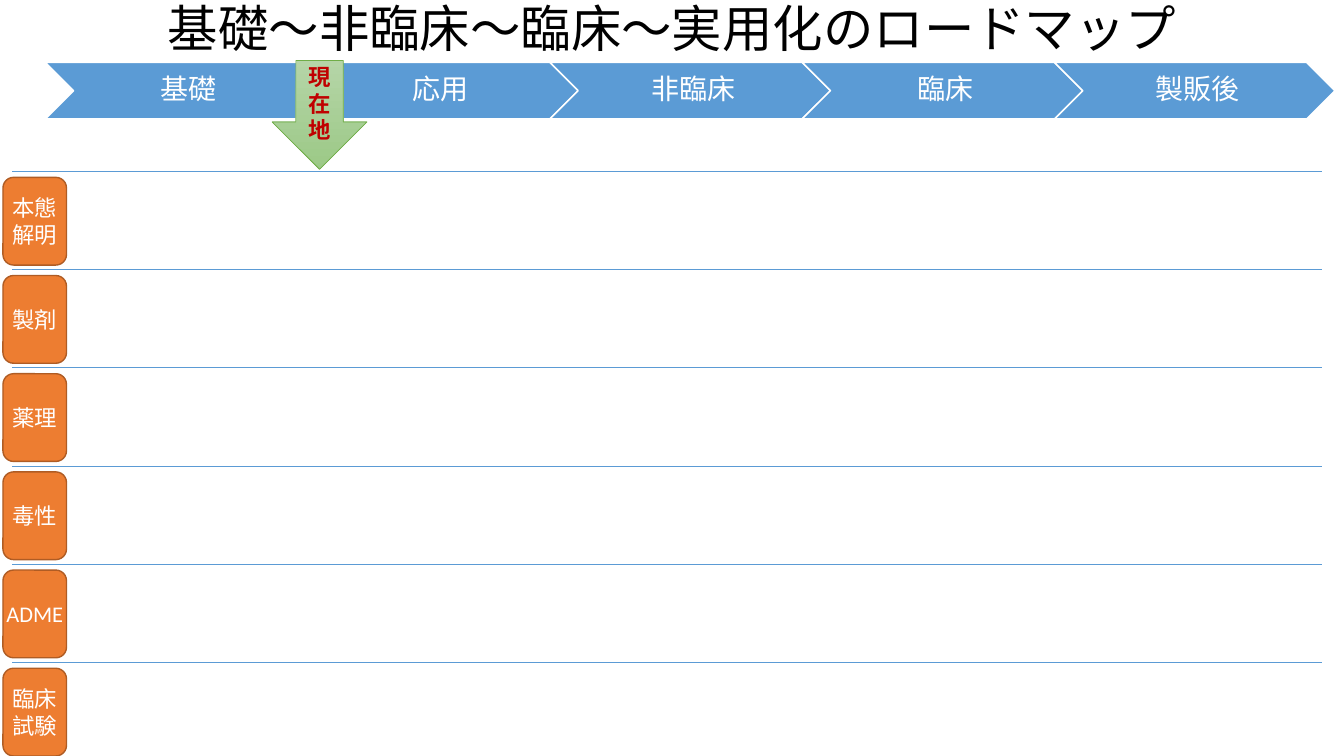
from lxml.etree import SubElement
from pptx import Presentation
from pptx.dml.color import RGBColor
from pptx.enum.shapes import MSO_CONNECTOR as Connector, MSO_SHAPE as Preset
from pptx.enum.text import MSO_ANCHOR as Anchor, MSO_AUTO_SIZE as AutoSize, PP_ALIGN as Align
from pptx.oxml.ns import qn
from pptx.util import Inches, Pt

WIDTH, HEIGHT = 13.33, 7.5
COLORS = {
    "black": "000000", "white": "FFFFFF", "blue": "5B9BD5",
    "orange": "ED7D31", "brown": "AF5C24", "red": "C00000",
    "green": "70AD47", "green_top": "B5D5A7", "green_bottom": "9CC987",
}
PHASES = ["基礎", "応用", "非臨床", "臨床", "製販後"]
TOPICS = ["本態\n解明", "製剤", "薬理", "毒性", "ADME", "臨床\n試験"]
PHASE_LEFT, PHASE_PITCH, PHASE_WIDTH = 0.45, 2.5025, 2.78
BAND_TOP, BAND_HEIGHT = 0.62, 0.56
ROWS_TOP, ROW_PITCH = 1.7, 0.974
RULE_LEFT, RULE_RIGHT = 0.12, 13.11


def color(name):
    return RGBColor.from_string(COLORS[name])


def write(shape, text, size, ink, bold=False, insets=(0.1, 0.05, 0.1, 0.05),
          wrap=True, line_spacing=1.0, space_after=0):
    """Fill a shape with centred text, one paragraph per line of text."""
    frame = shape.text_frame
    frame.auto_size = AutoSize.NONE
    frame.word_wrap = wrap
    frame.vertical_anchor = Anchor.MIDDLE
    (frame.margin_left, frame.margin_top,
     frame.margin_right, frame.margin_bottom) = map(Inches, insets)
    frame.text = text
    for para in frame.paragraphs:
        para.alignment = Align.CENTER
        para.line_spacing = line_spacing
        para.space_before = Pt(0)
        para.space_after = Pt(space_after)
        for span in para.runs:
            span.font.name = "Calibri"
            span.font.size = Pt(size)
            span.font.bold = bold
            span.font.color.rgb = color(ink)


def add_box(page, preset, left, top, width, height, fill, line, line_width=1):
    """Add a preset shape; a pair of fill names makes a top-down gradient."""
    box = page.shapes.add_shape(preset, *map(Inches, (left, top, width, height)))
    box.shadow.inherit = False
    if isinstance(fill, tuple):
        box.fill.gradient()
        box.fill.gradient_angle = 270
        for stop, name in zip(box.fill.gradient_stops, fill):
            stop.color.rgb = color(name)
    else:
        box.fill.solid()
        box.fill.fore_color.rgb = color(fill)
    box.line.color.rgb = color(line)
    box.line.width = Pt(line_width)
    return box


def add_title(page, text):
    title = page.shapes.title
    title.left, title.top = 0, 0
    title.width, title.height = Inches(WIDTH), Inches(BAND_TOP)
    write(title, text, 36, "black", line_spacing=0.9)


def add_phase(page, column, text):
    chevron = add_box(page, Preset.CHEVRON, PHASE_LEFT + column * PHASE_PITCH, BAND_TOP,
                      PHASE_WIDTH, BAND_HEIGHT, "blue", "white")
    write(chevron, text, 20, "white", insets=(0.09, 0.03, 0.03, 0.03),
          line_spacing=0.9, space_after=7)


def add_rule(page, row):
    y = Inches(ROWS_TOP + row * ROW_PITCH)
    rule = page.shapes.add_connector(Connector.STRAIGHT, Inches(RULE_LEFT), y,
                                     Inches(RULE_RIGHT), y)
    rule.line.color.rgb = color("blue")
    rule.line.width = Pt(0.5)
    SubElement(rule._element.spPr, qn("a:effectLst"))


def add_topic(page, row, text):
    label = add_box(page, Preset.ROUNDED_RECTANGLE, 0.03, ROWS_TOP + 0.06 + row * ROW_PITCH,
                    0.63, 0.87, "orange", "brown")
    write(label, text, 16, "white", insets=(0, 0, 0, 0), wrap=False)


def add_position_arrow(page, text):
    arrow = add_box(page, Preset.DOWN_ARROW, 2.7, 0.6, 0.94, 1.08,
                    ("green_top", "green_bottom"), "green", 0.5)
    write(arrow, text, 16, "red", bold=True)


def main():
    deck = Presentation()
    deck.slide_width, deck.slide_height = Inches(WIDTH), Inches(HEIGHT)
    page = deck.slides.add_slide(deck.slide_layouts.get_by_name("Title Only"))
    add_title(page, "基礎～非臨床～臨床～実用化のロードマップ")
    for column, phase in enumerate(PHASES):
        add_phase(page, column, phase)
    for row in range(len(TOPICS)):
        add_rule(page, row)
    for row, topic in enumerate(TOPICS):
        add_topic(page, row, topic)
    add_position_arrow(page, "現在地")
    deck.save("out.pptx")


if __name__ == "__main__":
    main()
